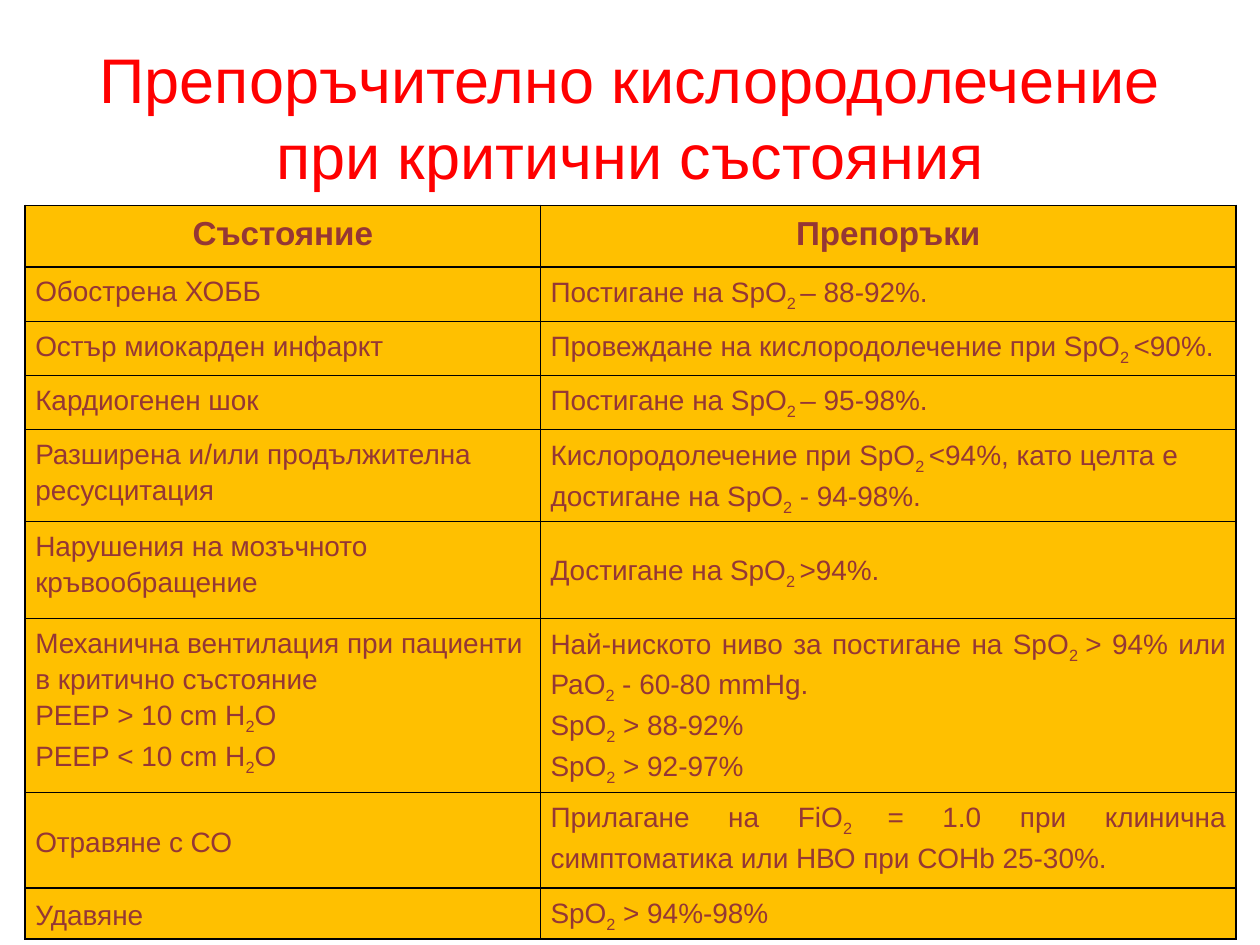
from lxml.etree import SubElement
from pptx import Presentation
from pptx.dml.color import RGBColor
from pptx.enum.text import MSO_ANCHOR, MSO_AUTO_SIZE, PP_ALIGN
from pptx.oxml.ns import qn
from pptx.util import Inches, Pt

COLORS = {"title": "FF0000", "text": "953735", "fill": "FFC000", "line": "000000"}
LEFT, CENTER, JUST = PP_ALIGN.LEFT, PP_ALIGN.CENTER, PP_ALIGN.JUSTIFY
TOP, MIDDLE = MSO_ANCHOR.TOP, MSO_ANCHOR.MIDDLE

TITLE = "Препоръчително кислородолечение при критични състояния"
WIDTHS = [4.09, 5.52]
HEAD = ["Състояние", "Препоръки"]
# Height, then text, alignment and anchor of each cell; _x_ marks a subscript
ROWS = [
    (0.43, ("Обострена ХОББ", LEFT, TOP),
     ("Постигане на SpO_2 _– 88-92%.", LEFT, TOP)),
    (0.43, ("Остър миокарден инфаркт", LEFT, TOP),
     ("Провеждане на кислородолечение при SpO_2 _<90%.", LEFT, TOP)),
    (0.43, ("Кардиогенен шок", LEFT, TOP),
     ("Постигане на SpO_2 _– 95-98%.", LEFT, TOP)),
    (0.73, ("Разширена и/или продължителна ресусцитация", LEFT, TOP),
     ("Кислородолечение при SpO_2 _<94%, като целта е достигане на SpO_2_ - 94-98%.",
      LEFT, TOP)),
    (0.77, ("Нарушения на мозъчното кръвообращение", LEFT, TOP),
     ("Достигане на SpO_2 _>94%.", JUST, MIDDLE)),
    (1.38, ("Механична вентилация при пациенти в критично състояние\n"
            "РЕЕР > 10 cm H_2_O\nРЕЕР < 10 cm H_2_O", LEFT, TOP),
     ("Най-ниското ниво за постигане на SpO_2 _> 94% или РаO_2_ - 60-80 mmHg.\n"
      "SpO_2_ > 88-92%\nSpO_2_ > 92-97%", JUST, TOP)),
    (0.76, ("Отравяне с СО", LEFT, MIDDLE),
     ("Прилагане на FiO_2 _= 1.0 при клинична симптоматика или НВО при COHb 25-30%.",
      JUST, TOP)),
    (0.4, ("Удавяне", LEFT, MIDDLE), ("SpO_2_ > 94%-98%", JUST, MIDDLE)),
]


def write(frame, text, size=16, color="text", bold=False, align=LEFT, space=1.15):
    """Fill a text frame, one paragraph a line, with _x_ as subscript."""
    for i, line in enumerate(text.split("\n")):
        para = frame.add_paragraph() if i else frame.paragraphs[0]
        para.alignment, para.line_spacing = align, space
        for j, part in enumerate(line.split("_")):
            if not part:
                continue
            run = para.add_run()
            run.text = part
            font = run.font
            font.name, font.size, font.bold = "Arial", Pt(size), bold
            font.color.rgb = RGBColor.from_string(COLORS[color])
            if j % 2:
                run._r.get_or_add_rPr().set("baseline", "-25000")


def border(cell):
    props = cell._tc.get_or_add_tcPr()
    for side in ("lnL", "lnR", "lnT", "lnB"):
        line = SubElement(props, qn(f"a:{side}"), w=str(Pt(1)))
        fill = SubElement(line, qn("a:solidFill"))
        SubElement(fill, qn("a:srgbClr"), val=COLORS["line"])


class Deck:
    def __init__(self):
        self.prs = Presentation()
        self.prs.slide_width, self.prs.slide_height = Inches(10), Inches(7.5)
        self.slide = self.prs.slides.add_slide(self.prs.slide_layouts[5])

    def title(self, text, left, top, width, height):
        shape = self.slide.shapes.title
        shape.left, shape.top = Inches(left), Inches(top)
        shape.width, shape.height = Inches(width), Inches(height)
        frame = shape.text_frame
        frame.word_wrap, frame.auto_size = True, MSO_AUTO_SIZE.NONE
        frame.vertical_anchor = MIDDLE
        write(frame, text, size=36, color="title", align=CENTER, space=1)

    def cell(self, cell, text, anchor=TOP, **style):
        cell.margin_left = cell.margin_right = Inches(0.08)
        cell.margin_top = cell.margin_bottom = Inches(0.04)
        cell.vertical_anchor = anchor
        border(cell)
        cell.fill.solid()
        cell.fill.fore_color.rgb = RGBColor.from_string(COLORS["fill"])
        write(cell.text_frame, text, **style)

    def table(self, left, top, widths, head, rows):
        heights = [0.49] + [row[0] for row in rows]
        table = self.slide.shapes.add_table(
            len(heights), len(widths), Inches(left), Inches(top),
            Inches(sum(widths)), Inches(sum(heights))).table
        for col, width in zip(table.columns, widths):
            col.width = Inches(width)
        for row, height in zip(table.rows, heights):
            row.height = Inches(height)
        for c, text in enumerate(head):
            self.cell(table.cell(0, c), text, size=19, bold=True, align=CENTER)
        for r, (_, *cells) in enumerate(rows, 1):
            for c, (text, align, anchor) in enumerate(cells):
                self.cell(table.cell(r, c), text, anchor, align=align)


def main():
    deck = Deck()
    deck.title(TITLE, 0.5, 0.3, 9, 1.25)
    deck.table(0.2, 1.63, WIDTHS, HEAD, ROWS)
    deck.prs.save("out.pptx")


if __name__ == "__main__":
    main()
